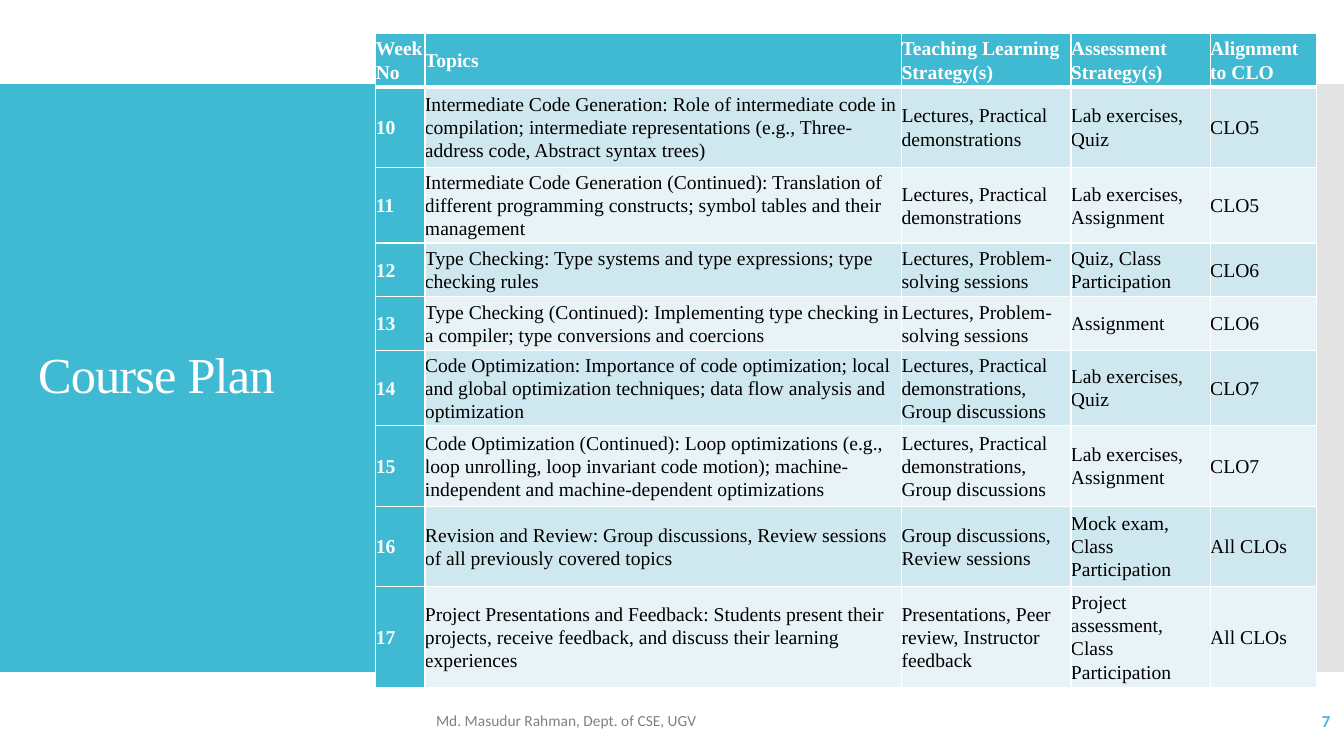
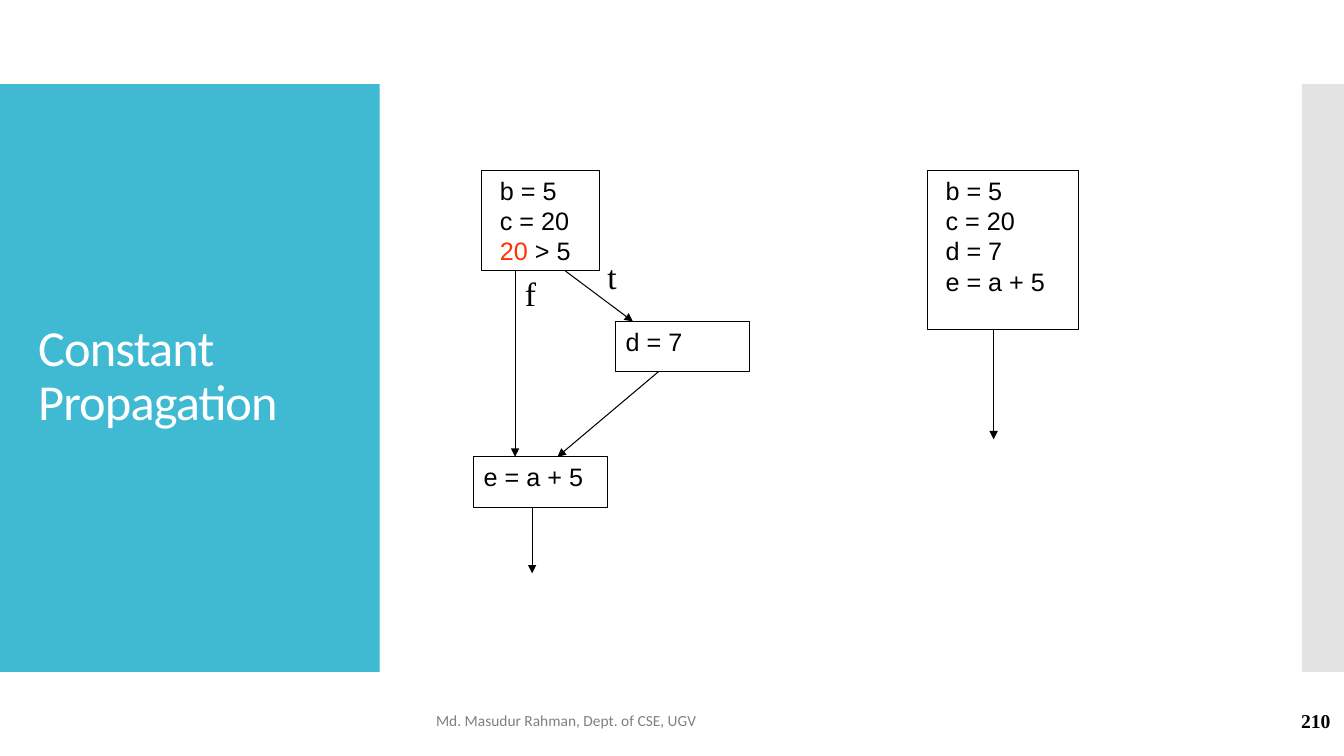
from lxml.etree import SubElement
from pptx import Presentation
from pptx.dml.color import RGBColor
from pptx.enum.shapes import MSO_CONNECTOR, MSO_SHAPE
from pptx.enum.text import MSO_ANCHOR, PP_ALIGN
from pptx.oxml import parse_xml
from pptx.oxml.ns import nsdecls, qn
from pptx.util import Cm, Pt

TEAL, STRIP_GRAY, FOOTER_GRAY = "40BAD2", "C8C8C8", "808080"
WHITE, BLACK, RED = "FFFFFF", "000000", "FF3300"
ROW_TINTS = ("CFE7EE", "E8F3F7")
SERIF, SANS, DIAGRAM_FONT = "Times New Roman", "Calibri", "Arial"
FOOTER = "Md. Masudur Rahman, Dept. of CSE, UGV"

COLUMN_WIDTHS = (1.24, 12.01, 4.27, 3.51, 2.67)
ROW_HEIGHTS = (1.35, 2.03, 1.35, 1.35, 1.35, 1.88, 2.03, 2.03, 2.03)
COURSE_PLAN = (
    ("Week No", "Topics", "Teaching Learning Strategy(s)",
     "Assessment Strategy(s)", "Alignment to CLO"),
    ("10", "Intermediate Code Generation: Role of intermediate code in compilation; "
     "intermediate representations (e.g., Three-address code, Abstract syntax trees)",
     "Lectures, Practical demonstrations", "Lab exercises, Quiz", "CLO5"),
    ("11", "Intermediate Code Generation (Continued): Translation of different "
     "programming constructs; symbol tables and their management",
     "Lectures, Practical demonstrations", "Lab exercises, Assignment", "CLO5"),
    ("12", "Type Checking: Type systems and type expressions; type checking rules",
     "Lectures, Problem-solving sessions", "Quiz, Class Participation", "CLO6"),
    ("13", "Type Checking (Continued): Implementing type checking in a compiler; "
     "type conversions and coercions",
     "Lectures, Problem-solving sessions", "Assignment", "CLO6"),
    ("14", "Code Optimization: Importance of code optimization; local and global "
     "optimization techniques; data flow analysis and optimization",
     "Lectures, Practical demonstrations, Group discussions",
     "Lab exercises, Quiz", "CLO7"),
    ("15", "Code Optimization (Continued): Loop optimizations (e.g., loop unrolling, "
     "loop invariant code motion); machine-independent and machine-dependent optimizations",
     "Lectures, Practical demonstrations, Group discussions",
     "Lab exercises, Assignment", "CLO7"),
    ("16", "Revision and Review: Group discussions, Review sessions of all previously "
     "covered topics",
     "Group discussions, Review sessions", "Mock exam, Class Participation", "All CLOs"),
    ("17", "Project Presentations and Feedback: Students present their projects, "
     "receive feedback, and discuss their learning experiences",
     "Presentations, Peer review, Instructor feedback",
     "Project assessment, Class Participation", "All CLOs"),
)


def color(hex_string):
    return RGBColor.from_string(hex_string)


def cm(lengths):
    return [Cm(length) for length in lengths]


def style(font, name, size, hex_color, bold=False):
    font.name = name
    font.size = Pt(size)
    font.bold = bold
    font.color.rgb = color(hex_color)


def add_rectangle(slide, place, fill=None, line=None):
    shape = slide.shapes.add_shape(MSO_SHAPE.RECTANGLE, *cm(place))
    shape.shadow.inherit = False
    if fill:
        shape.fill.solid()
        shape.fill.fore_color.rgb = color(fill)
    else:
        shape.fill.background()
    if line:
        shape.line.color.rgb = color(line)
        shape.line.width = Pt(0.75)
    else:
        shape.line.fill.background()
    return shape


def add_text(slide, place, text, font, size, hex_color, bold=False, wrap=True,
             anchor=MSO_ANCHOR.MIDDLE):
    """Add a one-paragraph text box and return the paragraph."""
    text_frame = slide.shapes.add_textbox(*cm(place)).text_frame
    text_frame.word_wrap = wrap
    text_frame.vertical_anchor = anchor
    text_frame.text = text
    paragraph = text_frame.paragraphs[0]
    style(paragraph.runs[0].font, font, size, hex_color, bold)
    return paragraph


def add_base_slide(presentation, title, title_font, number, number_style):
    """Add a slide with the side bands, title, footer and slide number."""
    slide = presentation.slides.add_slide(presentation.slide_layouts[6])
    add_rectangle(slide, (0, 2.12, 9.57, 14.81), TEAL)
    strip = add_rectangle(slide, (32.81, 2.12, 1.06, 14.81), STRIP_GRAY)
    strip_color = strip.fill._xPr.find(".//" + qn("a:srgbClr"))
    SubElement(strip_color, qn("a:alpha"), val="50000")

    heading = add_text(slide, (0.71, 3.12, 8.18, 12.78), title, title_font, 36, WHITE)
    heading.line_spacing = 0.9
    heading.runs[0].font._element.set("spc", "-60")
    add_text(slide, (10.74, 17.65, 16.41, 1.02), FOOTER, SANS, 11, FOOTER_GRAY)
    page = add_text(slide, (29.54, 17.65, 4.24, 1.02), number, *number_style, bold=True)
    page.alignment = PP_ALIGN.RIGHT
    return slide


def set_borders(cell, top, bottom):
    """Draw white borders, 1 pt at the sides, ahead of the cell's fill."""
    widths = {"lnL": 1, "lnR": 1, "lnT": top, "lnB": bottom}
    properties = cell._tc.get_or_add_tcPr()
    for index, (side, width) in enumerate(widths.items()):
        properties.insert(index, parse_xml(
            f'<a:{side} {nsdecls("a")} w="{Pt(width)}"><a:solidFill>'
            f'<a:srgbClr val="{WHITE}"/></a:solidFill></a:{side}>'))


def fill_cell(cell, text, row, column):
    is_heading = row == 0 or column == 0
    cell.margin_left = cell.margin_right = cell.margin_top = cell.margin_bottom = 0
    cell.vertical_anchor = MSO_ANCHOR.MIDDLE
    cell.fill.solid()
    cell.fill.fore_color.rgb = color(TEAL if is_heading else ROW_TINTS[(row - 1) % 2])
    set_borders(cell, top=3 if row == 1 else 1, bottom=3 if row == 0 else 1)
    cell.text_frame.text = text
    paragraph = cell.text_frame.paragraphs[0]
    paragraph.line_spacing = 1.07
    paragraph.space_after = Pt(8)
    style(paragraph.runs[0].font, SERIF, 14, WHITE if is_heading else BLACK, is_heading)


def add_plan_table(slide):
    place = (9.47, 0.84, sum(COLUMN_WIDTHS), sum(ROW_HEIGHTS))
    table = slide.shapes.add_table(
        len(COURSE_PLAN), len(COLUMN_WIDTHS), *cm(place)).table
    for column, width in zip(table.columns, COLUMN_WIDTHS):
        column.width = Cm(width)
    for row, height in zip(table.rows, ROW_HEIGHTS):
        row.height = Cm(height)
    for row, texts in enumerate(COURSE_PLAN):
        for column, text in enumerate(texts):
            fill_cell(table.cell(row, column), text, row, column)


def add_code_box(slide, place, lines, indent=0.25):
    """Add an outlined block of code; a line may be a tuple of (text, colour) runs."""
    text_frame = add_rectangle(slide, place, line=BLACK).text_frame
    text_frame.word_wrap = True
    text_frame.vertical_anchor = MSO_ANCHOR.TOP
    text_frame.margin_left = Cm(indent)
    for index, line in enumerate(lines):
        paragraph = text_frame.add_paragraph() if index else text_frame.paragraphs[0]
        paragraph.alignment = PP_ALIGN.LEFT
        for text, hex_color in ((line, BLACK),) if isinstance(line, str) else line:
            run = paragraph.add_run()
            run.text = text
            style(run.font, DIAGRAM_FONT, 18, hex_color)


def add_arrow(slide, start, end):
    connector = slide.shapes.add_connector(
        MSO_CONNECTOR.STRAIGHT, *cm(start), *cm(end))
    connector.line.color.rgb = color(BLACK)
    connector.line.width = Pt(0.75)
    SubElement(connector.line._get_or_add_ln(), qn("a:tailEnd"), type="triangle")
    SubElement(connector._element.spPr, qn("a:effectLst"))


def add_flow_graphs(slide):
    condition = (("20", RED), (" > 5", BLACK))
    add_code_box(slide, (12.14, 4.29, 2.97, 2.54), ("b = 5", "c = 20", condition), 0.46)
    add_code_box(slide, (15.52, 8.1, 3.38, 1.27), ("d = 7",))
    add_code_box(slide, (11.94, 11.51, 3.38, 1.27), ("e = a + 5",))
    add_code_box(slide, (23.37, 4.29, 3.81, 4.02),
                 ("b = 5", "c = 20", "d = 7", "e = a + 5"), 0.46)
    for start, end in (
        ((12.98, 6.83), (12.98, 11.51)),
        ((14.25, 6.83), (15.95, 8.1)),
        ((16.59, 9.37), (14.05, 11.51)),
        ((13.41, 12.78), (13.41, 14.45)),
        ((25.04, 8.31), (25.04, 11.07)),
    ):
        add_arrow(slide, start, end)
    for label, left, top in (("t", 15.06, 6.32), ("f", 12.98, 6.76)):
        add_text(slide, (left, top, 0.76, 1.27), label, SERIF, 24, BLACK,
                 wrap=False, anchor=MSO_ANCHOR.TOP)


def main():
    presentation = Presentation()
    presentation.slide_width, presentation.slide_height = cm((33.87, 19.05))
    add_plan_table(add_base_slide(
        presentation, "Course Plan", SERIF, "7", (SANS, 12, TEAL)))
    add_flow_graphs(add_base_slide(
        presentation, "Constant Propagation", SANS, "210", (SERIF, 14, BLACK)))
    presentation.save("out.pptx")


if __name__ == "__main__":
    main()
